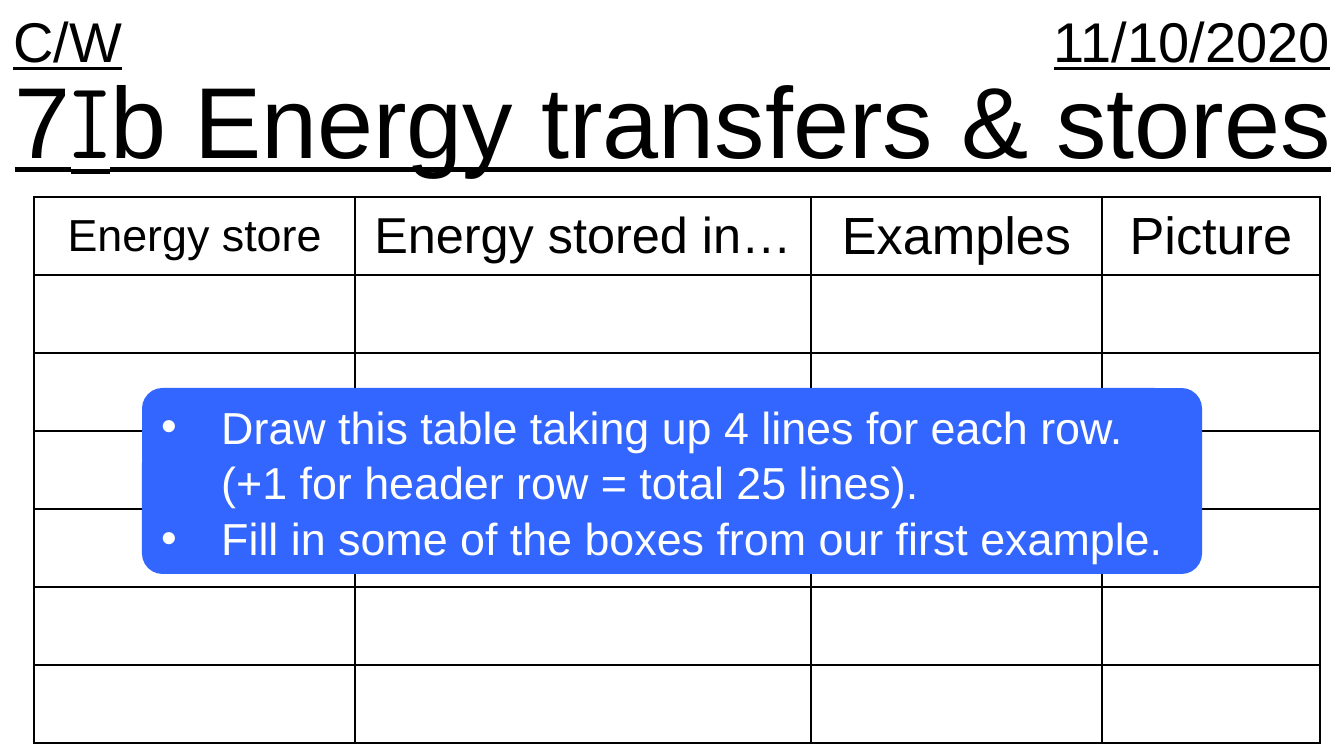
from lxml import etree
from pptx import Presentation, util as u
from pptx.dml.color import RGBColor
from pptx.enum import shapes, text
from pptx.oxml import ns

BLACK = RGBColor(0, 0, 0)
WHITE = RGBColor(255, 255, 255)
BLUE = RGBColor(0x33, 0x66, 0xFF)
FONT = "Arial"
COLS = (321, 456, 291, 218)
ROWS = 7
ROW = 78
HEADS = (("Energy store", 24), ("Energy stored in…", 27),
         ("Examples", 28), ("Picture", 28))
TASKS = (
    "Draw this table taking up 4 lines for each row. (+1 for header row = total 25 lines).",
    "Fill in some of the boxes from our first example.",
)


def px(n):
    return u.Emu(round(n * 914400 / 134.4))


def area(*box):
    return [px(n) for n in box]


def node(root, tag, **attrs):
    return etree.SubElement(root, ns.qn(tag), attrs)


def add_run(para, words, size, color=BLACK, font=FONT, under=None):
    run = para.add_run()
    run.text = words
    run.font.name = font
    run.font.size = u.Pt(size)
    run.font.color.rgb = color
    run.font.underline = under


def add_label(slide, box, words, align):
    frame = slide.shapes.add_textbox(*area(*box)).text_frame
    frame.word_wrap = True
    para = frame.paragraphs[0]
    para.alignment = align
    gap = node(para._p.get_or_add_pPr(), "a:spcBef")
    node(gap, "a:spcPct", val="50000")
    add_run(para, words, 30, under=True)


def add_title(slide):
    frame = slide.shapes.add_textbox(*area(-16, 87, 1378, 63)).text_frame
    frame.word_wrap = True
    frame.vertical_anchor = text.MSO_ANCHOR.MIDDLE
    frame.margin_left = frame.margin_right = px(9)
    frame.margin_top = frame.margin_bottom = px(5)
    para = frame.paragraphs[0]
    para.alignment = text.PP_ALIGN.CENTER
    for words, font in (("7", FONT), ("I", "Comic Neue"),
                        ("b Energy transfers & stores", FONT)):
        add_run(para, words, 54, font=font, under=True)


def style_cell(cell):
    cell.vertical_anchor = text.MSO_ANCHOR.MIDDLE
    props = cell._tc.get_or_add_tcPr()
    for side in "LRTB":
        line = node(props, f"a:ln{side}", w=str(u.Pt(1)))
        fill = node(line, "a:solidFill")
        node(fill, "a:srgbClr", val=str(BLACK))
    cell.fill.background()


def add_grid(slide):
    box = area(34, 197, sum(COLS), ROWS * ROW)
    table = slide.shapes.add_table(ROWS, len(COLS), *box).table
    table.first_row = table.horz_banding = False
    for col, width in zip(table.columns, COLS):
        col.width = px(width)
    for row in table.rows:
        row.height = px(ROW)
    for cell in table.iter_cells():
        style_cell(cell)
    for i, (words, size) in enumerate(HEADS):
        para = table.cell(0, i).text_frame.paragraphs[0]
        para.alignment = text.PP_ALIGN.CENTER
        add_run(para, words, size)


def add_tasks(slide):
    kind = shapes.MSO_SHAPE.ROUNDED_RECTANGLE
    panel = slide.shapes.add_shape(kind, *area(142, 388, 1060, 186))
    panel.adjustments[0] = 0.11
    panel.shadow.inherit = False
    panel.fill.solid()
    panel.fill.fore_color.rgb = BLUE
    panel.line.fill.background()
    frame = panel.text_frame
    frame.word_wrap = True
    frame.vertical_anchor = text.MSO_ANCHOR.MIDDLE
    for i, words in enumerate(TASKS):
        para = frame.add_paragraph() if i else frame.paragraphs[0]
        para.alignment = text.PP_ALIGN.LEFT
        para.line_spacing = 1.04
        props = para._p.get_or_add_pPr()
        indent = px(60)
        props.set("marL", str(indent))
        props.set("indent", str(-indent))
        node(props, "a:buFont", typeface=FONT)
        node(props, "a:buChar", char="•")
        add_run(para, words, 24, WHITE)


def main():
    deck = Presentation()
    deck.slide_width, deck.slide_height = area(1344, 756)
    slide = deck.slides.add_slide(deck.slide_layouts[6])
    add_label(slide, (0, 0, 164, 82), "C/W", text.PP_ALIGN.LEFT)
    add_label(slide, (1030, 0, 313, 82), "11/10/2020", text.PP_ALIGN.RIGHT)
    add_title(slide)
    add_grid(slide)
    add_tasks(slide)
    deck.save("out.pptx")


if __name__ == "__main__":
    main()
